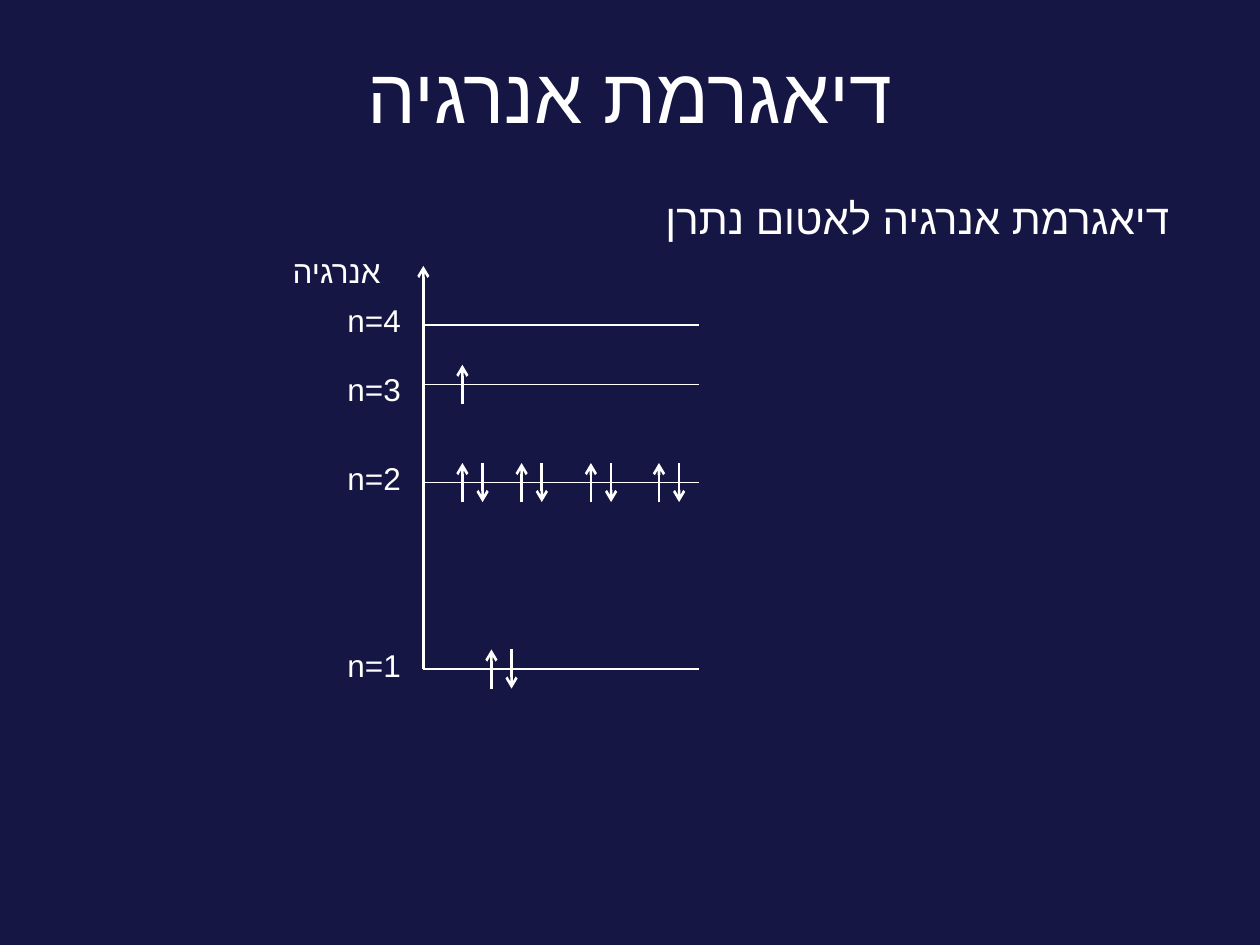
from dataclasses import dataclass

from pptx import Presentation
from pptx.dml.color import RGBColor
from pptx.enum.shapes import MSO_CONNECTOR as Conn
from pptx.enum.text import MSO_ANCHOR as Anchor, MSO_AUTO_SIZE as Fit, PP_ALIGN as Align
from pptx.oxml.ns import qn
from pptx.util import Inches, Pt
from lxml.etree import SubElement

NAVY = RGBColor(0x16, 0x16, 0x45)
WHITE = RGBColor(0xFF, 0xFF, 0xFF)
FONT = "Arial"

AXIS_X, AXIS_TOP, LEVEL_END = 3.36, 2.11, 5.55
LABEL_W, LABEL_H = 1.17, 0.4
SPIN_HALF, PAIR_GAP = 0.155, 0.16


@dataclass
class Level:
    n: int
    y: float
    label_y: float
    up: tuple[float, ...] = ()
    paired: bool = True


LEVELS = [
    Level(1, 5.31, 5.08, (3.9,)),
    Level(2, 3.83, 3.59, (3.67, 4.14, 4.69, 5.23)),
    Level(3, 3.05, 2.89, (3.67,), paired=False),
    Level(4, 2.58, 2.34),
]


def write(tf, text: str, size: float, align: Align) -> None:
    tf.text = text
    p = tf.paragraphs[0]
    p.alignment = align
    p._p.get_or_add_pPr().set("rtl", "1")
    r = p.runs[0]
    for name, value in {"name": FONT, "size": Pt(size)}.items():
        setattr(r.font, name, value)
    r.font.color.rgb = WHITE
    SubElement(r._r.get_or_add_rPr(), qn("a:cs"), typeface=FONT)


def add_text(s, text: str, x: float, y: float, w: float, h: float, size: float) -> None:
    tf = s.shapes.add_textbox(Inches(x), Inches(y), Inches(w), Inches(h)).text_frame
    for name, value in {"word_wrap": True, "auto_size": Fit.SHAPE_TO_FIT_TEXT}.items():
        setattr(tf, name, value)
    write(tf, text, size, Align.RIGHT)


def add_line(s, x1: float, y1: float, x2: float, y2: float,
             width: float = 0.75, arrow: bool = False) -> None:
    c = s.shapes.add_connector(Conn.STRAIGHT, Inches(x1), Inches(y1), Inches(x2), Inches(y2))
    c.line.color.rgb = WHITE
    c.line.width = Pt(width)
    if arrow:
        SubElement(c.line._get_or_add_ln(), qn("a:tailEnd"), type="arrow")
    SubElement(c._element.spPr, qn("a:effectLst"))


def add_level(s, level: Level) -> None:
    add_line(s, AXIS_X, level.y, LEVEL_END, level.y)
    add_text(s, f"n={level.n}", 2.11, level.label_y, LABEL_W, LABEL_H, 18)
    top, bottom = level.y - SPIN_HALF, level.y + SPIN_HALF
    for x in level.up:
        add_line(s, x, bottom, x, top, 1.5, arrow=True)
        if level.paired:
            add_line(s, x + PAIR_GAP, top, x + PAIR_GAP, bottom, 1.5, arrow=True)


def add_title(s, text: str) -> None:
    sp = s.shapes.title
    box = {"left": 0.5, "top": 0.3, "width": 9, "height": 0.87}
    for name, value in box.items():
        setattr(sp, name, Inches(value))
    tf = sp.text_frame
    frame = {"word_wrap": True, "auto_size": Fit.NONE, "vertical_anchor": Anchor.MIDDLE}
    for name, value in frame.items():
        setattr(tf, name, value)
    write(tf, text, 44, Align.CENTER)


def main() -> None:
    prs = Presentation()
    prs.slide_width, prs.slide_height = Inches(10), Inches(7.5)
    s = prs.slides.add_slide(prs.slide_layouts[5])
    s.background.fill.solid()
    s.background.fill.fore_color.rgb = NAVY

    add_title(s, "דיאגרמת אנרגיה")
    add_line(s, AXIS_X, LEVELS[0].y, AXIS_X, AXIS_TOP, 1.5, arrow=True)
    add_text(s, "אנרגיה", 1.95, 1.95, LABEL_W, LABEL_H, 18)
    for level in LEVELS:
        add_level(s, level)
    add_text(s, "דיאגרמת אנרגיה לאטום נתרן", 5, 1.48, 4.38, 0.51, 24)
    prs.save("out.pptx")


if __name__ == "__main__":
    main()
